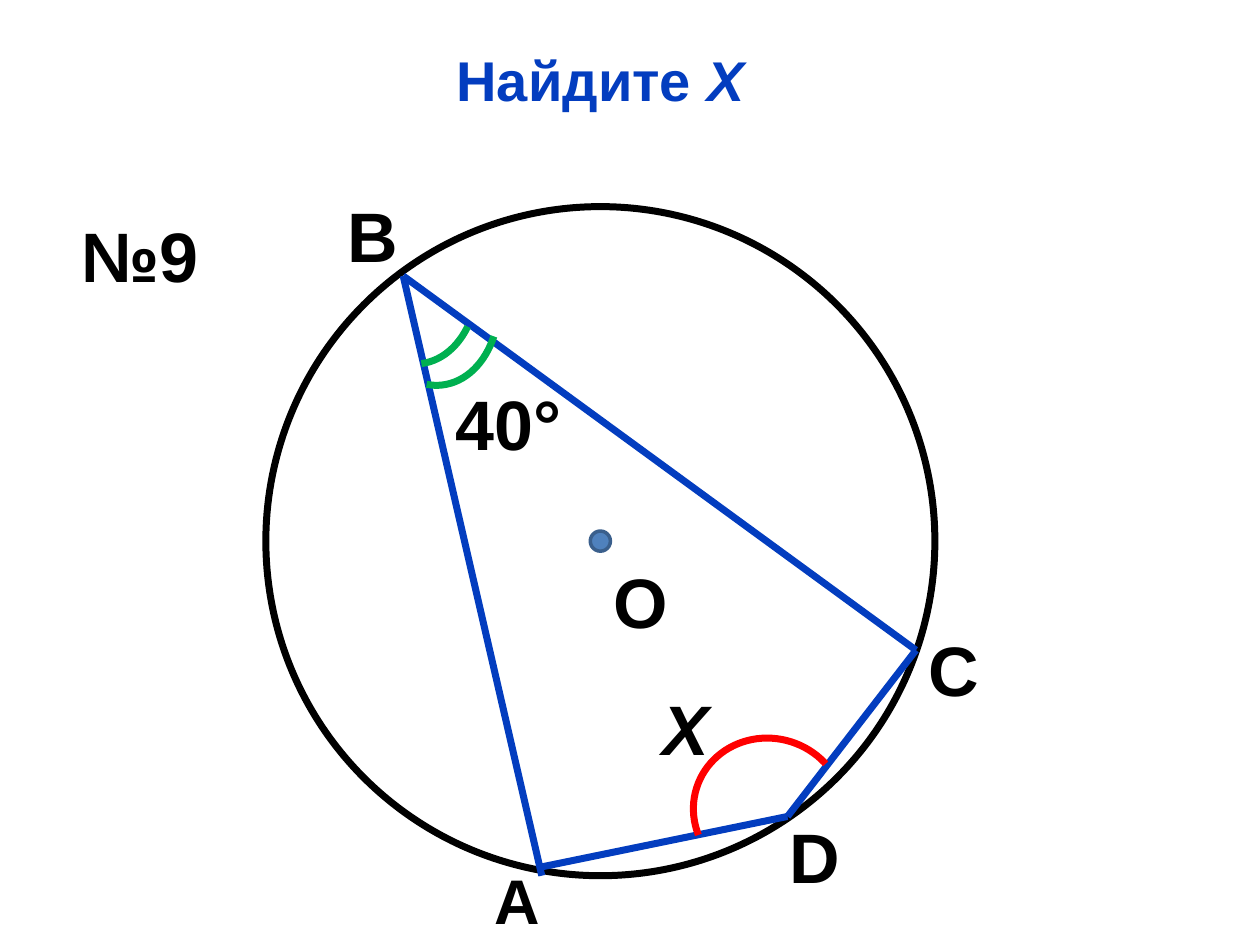
from lxml.etree import SubElement
from pptx import Presentation
from pptx.dml.color import RGBColor
from pptx.enum.shapes import MSO_CONNECTOR, MSO_SHAPE
from pptx.enum.text import MSO_AUTO_SIZE, PP_ALIGN
from pptx.oxml.ns import qn
from pptx.util import Inches, Pt

BLACK, WHITE, BLUE, RED, GREEN = "000000", "FFFFFF", "033DBF", "FF0000", "00B050"
COLUMNS, ROWS = 100, 75


def color(value):
    return RGBColor.from_string(value)


def add_run(paragraph, text, size=40, fill=BLACK, italic=False):
    run = paragraph.add_run()
    run.text = text
    font = run.font
    font.name, font.size = "Arial", Pt(size)
    font.bold, font.italic = True, italic
    font.color.rgb = color(fill)


class GeometrySlide:
    """Places elements on a grid of COLUMNS by ROWS."""

    line_width = 4

    def __init__(self, presentation):
        self.slide = presentation.slides.add_slide(presentation.slide_layouts[6])
        self.column = presentation.slide_width / COLUMNS
        self.row = presentation.slide_height / ROWS

    def place(self, *lengths):
        units = (self.column, self.row) * 2
        return [round(length * unit) for length, unit in zip(lengths, units)]

    def outline(self, shape, line, width=None):
        shape.line.color.rgb = color(line)
        shape.line.width = Pt(width or self.line_width)

    def circle(self, center, diameter, fill, line, width=None):
        left, top = (value - diameter / 2 for value in center)
        shape = self.slide.shapes.add_shape(
            MSO_SHAPE.OVAL, *self.place(left, top, diameter, diameter))
        shape.shadow.inherit = False
        shape.fill.solid()
        shape.fill.fore_color.rgb = color(fill)
        self.outline(shape, line, width)

    def segment(self, start, end):
        connector = self.slide.shapes.add_connector(
            MSO_CONNECTOR.STRAIGHT, *self.place(*start, *end))
        self.outline(connector, BLUE)
        SubElement(connector._element.spPr, qn("a:effectLst"))

    def arc(self, box, rotation, angles, line):
        shape = self.slide.shapes.add_shape(MSO_SHAPE.ARC, *self.place(*box))
        shape.shadow.inherit = False
        shape.fill.background()
        shape.rotation = rotation
        for index, angle in enumerate(angles):
            shape.adjustments[index] = angle * 0.6  # 60000ths of a degree / 100000
        self.outline(shape, line)

    def text(self, box, *parts, align=PP_ALIGN.LEFT, wrap=True, **style):
        frame = self.slide.shapes.add_textbox(*self.place(*box)).text_frame
        frame.word_wrap = wrap
        frame.auto_size = MSO_AUTO_SIZE.SHAPE_TO_FIT_TEXT
        paragraph = frame.paragraphs[0]
        paragraph.alignment = align
        for part, italic in parts:
            add_run(paragraph, part, italic=italic, **style)


def main():
    presentation = Presentation()
    presentation.slide_width, presentation.slide_height = Inches(10), Inches(7.5)
    drawing = GeometrySlide(presentation)

    # Title
    drawing.text((3.1, 3.1, 89.1, 6.4), ("Найдите ", False), ("Х", True),
                 align=PP_ALIGN.CENTER, size=32, fill=BLUE)

    # Circle, its center and the inscribed quadrilateral
    center = (47.65, 42.95)
    drawing.circle(center, 53.1, WHITE, BLACK)
    b, c, d = (32, 21.9), (72.7, 51.6), (62.5, 64.8)
    for start, end in ((b, (43, 69.5)), (c, b), ((43, 68.8), d), (c, d)):
        drawing.segment(start, end)
    drawing.circle(center, 1.6, "4F81BD", "3A5F8C", width=2)

    # Angle marks: start and end angles in degrees, before rotation
    drawing.arc((55, 58.6, 12.1, 11.5), 197.6, (323.61, 122.54), RED)
    drawing.arc((27.3, 14.6, 10.6, 14.3), 173.8, (228.96, 269.45), GREEN)
    drawing.arc((29, 16.3, 10.6, 14.3), 173.8, (219.74, 279.83), GREEN)

    # Labels
    drawing.text((47.7, 43.8, 6.4, 7.7), ("О", False), wrap=False)
    for label, left, top, width in (
        ("40°", 35.2, 29.7, 12.5),
        ("В", 26.6, 14.8, 6.2),
        ("С", 72.7, 49.2, 7),
        ("D", 61.7, 64.1, 6.2),
        ("№9", 5.5, 16.4, 15.6),
    ):
        drawing.text((left, top, width, 7.7), (label, False))
    drawing.text((51.6, 53.9, 6.2, 7.7), ("Х", True))
    drawing.text((38.3, 67.9, 7, 7.1), ("А", False), size=36)

    presentation.save("out.pptx")


if __name__ == "__main__":
    main()
